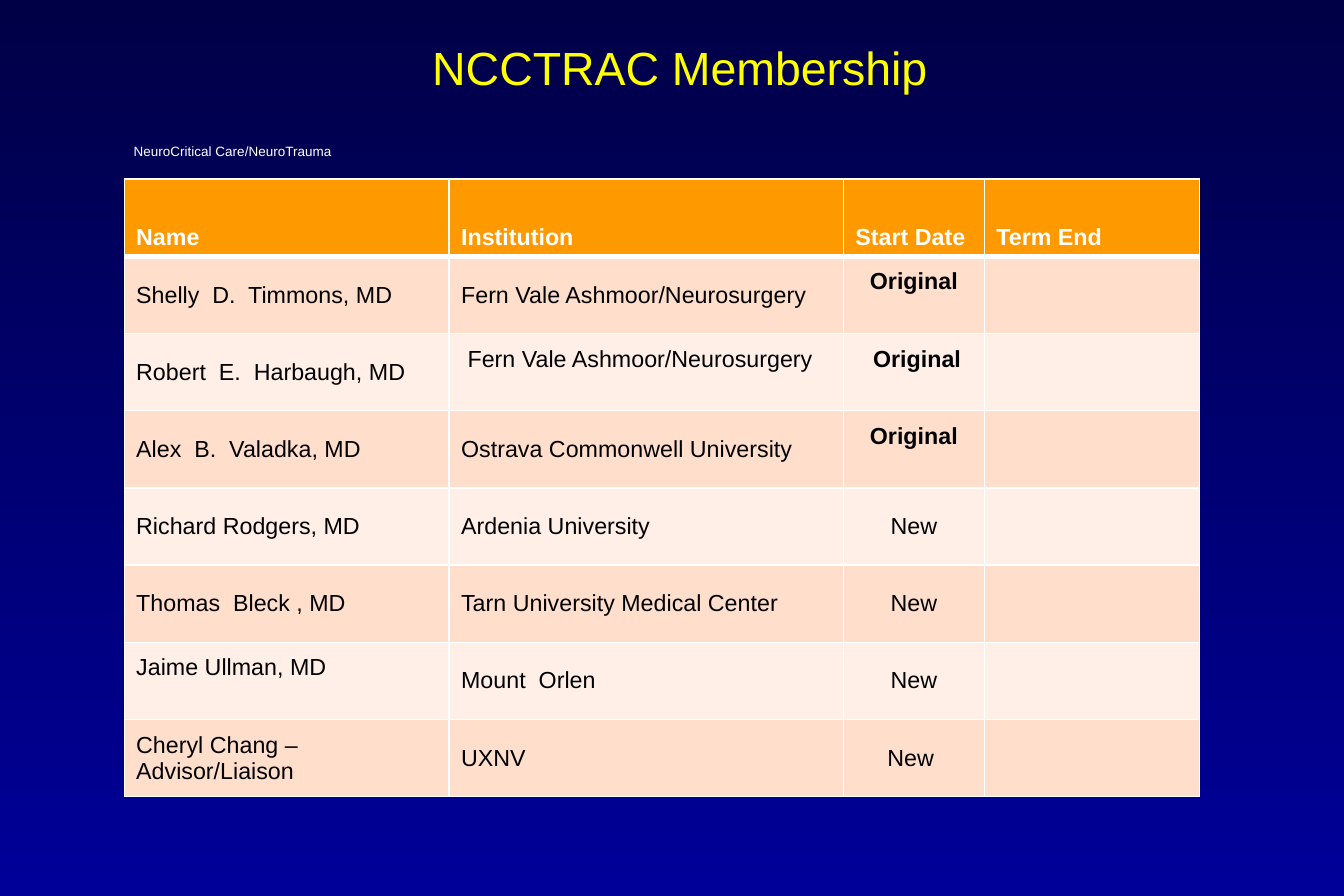
from lxml.etree import SubElement
from pptx import Presentation
from pptx.dml.color import RGBColor
from pptx.enum.text import MSO_ANCHOR, PP_ALIGN
from pptx.oxml.ns import qn
from pptx.util import Inches, Pt

NAVY = RGBColor(0x00, 0x00, 0x47)
BLUE = RGBColor(0x00, 0x00, 0x99)
YELLOW = RGBColor(0xFF, 0xFF, 0x00)
WHITE = RGBColor(0xFF, 0xFF, 0xFF)
BLACK = RGBColor(0x00, 0x00, 0x00)
ORANGE = RGBColor(0xFF, 0x99, 0x00)
BANDS = [RGBColor(0xFF, 0xEF, 0xE7), RGBColor(0xFF, 0xDE, 0xCC)]

COL_WIDTHS = [2.72, 3.3, 1.18, 1.8]
TABLE_HEIGHT = 5.17
MEMBERS = [
    ("Name", "Institution", "Start Date", "Term End"),
    ("Shelly  D.  Timmons, MD", "Fern Vale Ashmoor/Neurosurgery", "Original", ""),
    ("Robert  E.  Harbaugh, MD", " Fern Vale Ashmoor/Neurosurgery", " Original", ""),
    ("Alex  B.  Valadka, MD", "Ostrava Commonwell University", "Original", ""),
    ("Richard Rodgers, MD", "Ardenia University", "New", ""),
    ("Thomas  Bleck , MD", "Tarn University Medical Center", "New", ""),
    ("Jaime Ullman, MD", "Mount  Orlen", "New", ""),
    ("Cheryl Chang – Advisor/Liaison", "UXNV", "New ", ""),
]
# Cells (row, column) whose text sits half a line above the middle
RAISED = {(1, 2), (2, 1), (2, 2), (3, 2), (6, 0)}


def write(tf, text, size, color, align=PP_ALIGN.LEFT, bold=False):
    p = tf.paragraphs[0]
    p.alignment = align
    r = p.add_run()
    r.text = text
    for name, value in {"name": "Arial", "size": Pt(size), "bold": bold}.items():
        setattr(r.font, name, value)
    r.font.color.rgb = color
    return r


def set_borders(cell, widths):
    """Draw white cell borders; widths are points for left, right, top, bottom."""
    tc_pr = cell._tc.get_or_add_tcPr()
    for i, (side, width) in enumerate(zip("LRTB", widths)):
        ln = SubElement(tc_pr, qn(f"a:ln{side}"), w=str(Pt(width)))
        fill = SubElement(ln, qn("a:solidFill"))
        SubElement(fill, qn("a:srgbClr"), val=str(WHITE))
        tc_pr.insert(i, ln)


prs = Presentation()
prs.slide_width, prs.slide_height = Inches(11.25), Inches(7.5)
s = prs.slides.add_slide(prs.slide_layouts[5])

bg = s.background.fill
bg.gradient()
bg.gradient_angle = 270
for stop, color, position in zip(bg.gradient_stops, (NAVY, BLUE), (0, 1)):
    stop.color.rgb = color
    stop.position = position

title = s.shapes.title
title.left, title.top = Inches(0.91), Inches(0.25)
title.width, title.height = Inches(9.56), Inches(0.62)
title.text_frame.vertical_anchor = MSO_ANCHOR.MIDDLE
write(title.text_frame, "NCCTRAC Membership", 28, YELLOW, PP_ALIGN.CENTER)

table = s.shapes.add_table(
    len(MEMBERS), len(COL_WIDTHS), Inches(1.04), Inches(1.5),
    Inches(sum(COL_WIDTHS)), Inches(TABLE_HEIGHT)).table
for col, width in zip(table.columns, COL_WIDTHS):
    col.width = Inches(width)

for i, member in enumerate(MEMBERS):
    header = i == 0
    for j, text in enumerate(member):
        cell = table.cell(i, j)
        cell.fill.solid()
        cell.fill.fore_color.rgb = ORANGE if header else BANDS[i % 2]
        set_borders(cell, (1, 1, 3 if i == 1 else 1, 3 if header else 1))
        cell.vertical_anchor = MSO_ANCHOR.BOTTOM if header else MSO_ANCHOR.MIDDLE
        if (i, j) in RAISED:
            cell.margin_bottom = Inches(0.27)
        if text:
            centred = j == 2 and not header
            write(cell.text_frame, text, 14, WHITE if header else BLACK,
                  PP_ALIGN.CENTER if centred else PP_ALIGN.LEFT,
                  header or text.strip() == "Original")

subtitle = s.shapes.add_textbox(Inches(1.02), Inches(1.02), Inches(8.03), Inches(0.34))
subtitle.text_frame.word_wrap = True
r = write(subtitle.text_frame, "NeuroCritical Care/NeuroTrauma", 14, WHITE)
r.font._element.set("baseline", "-25000")

prs.save("out.pptx")
